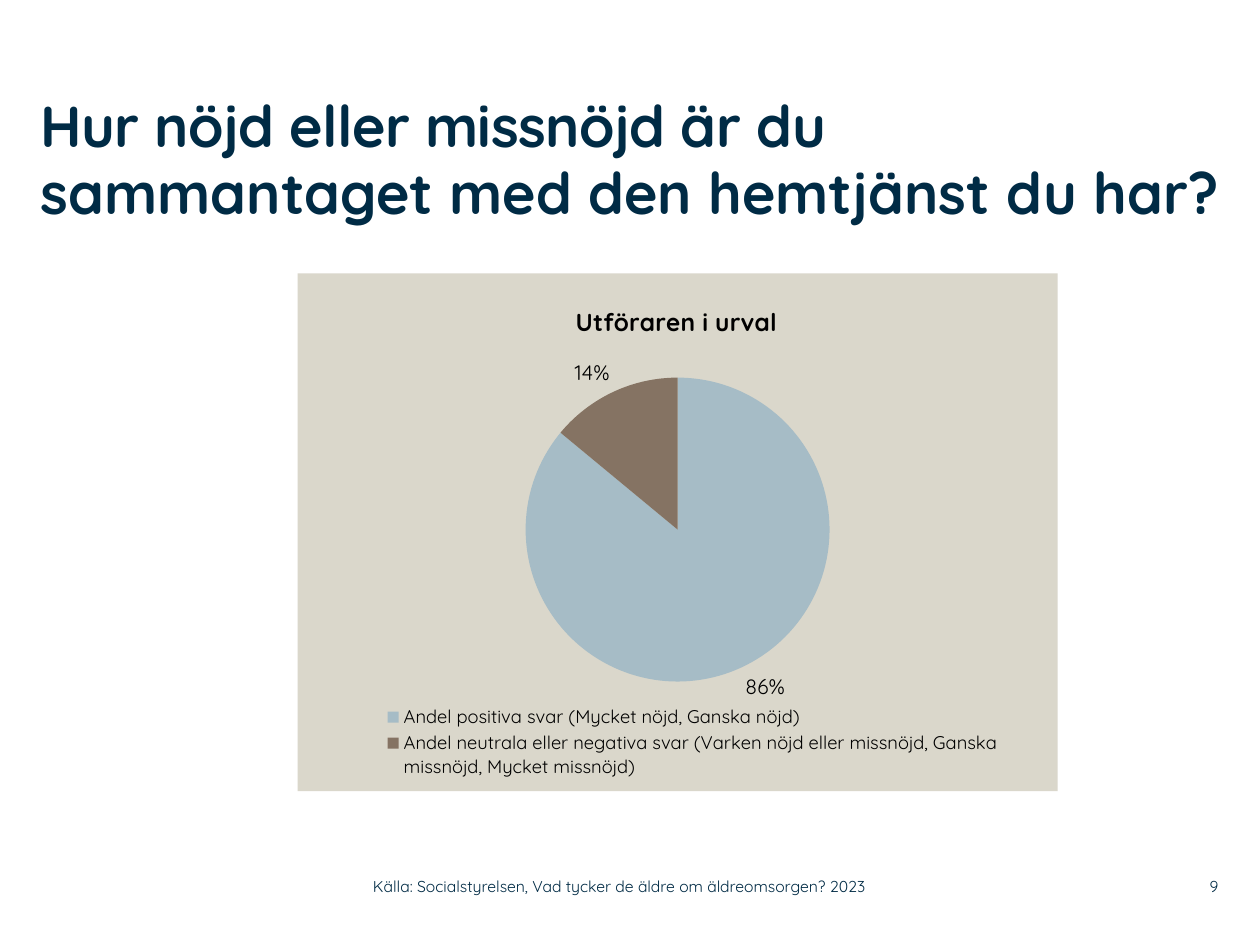
"""Build a slide with a pie chart of how satisfied clients are with their home care."""
import lxml.etree
import pptx
import pptx.chart.data
import pptx.dml.color
import pptx.enum.chart
import pptx.enum.text
import pptx.oxml.ns
import pptx.util

Cm = pptx.util.Cm
Pt = pptx.util.Pt
RGBColor = pptx.dml.color.RGBColor
ALIGN = pptx.enum.text.PP_ALIGN
ANCHOR = pptx.enum.text.MSO_ANCHOR

FONT = "Quicksand"
NAVY = RGBColor(0x00, 0x2B, 0x45)
BLACK = RGBColor(0x00, 0x00, 0x00)
SAND = RGBColor(0xDA, 0xD7, 0xCB)
BLUE = RGBColor(0xA6, 0xBC, 0xC6)
BROWN = RGBColor(0x85, 0x73, 0x63)

TITLE = "Hur nöjd eller missnöjd är du\vsammantaget med den hemtjänst du har?"
PROVIDER = "Utföraren i urval"
ANSWERS = [
    ("Andel positiva svar (Mycket nöjd, Ganska nöjd)", 86, BLUE),
    ("Andel neutrala eller negativa svar (Varken nöjd eller missnöjd, "
     "Ganska missnöjd, Mycket missnöjd)", 14, BROWN),
]
FOOTER = [
    ("Källa: Socialstyrelsen, Vad tycker de äldre om äldreomsorgen? 2023",
     7.52, 11.25, ALIGN.LEFT),
    ("9", 23.37, 1.19, ALIGN.RIGHT),
]


def set_font(font, size, color, bold=False):
    font.name = FONT
    font.size = Pt(size)
    font.bold = bold
    font.color.rgb = color


def fill_frame(shape, text, size, anchor, align, bold=False):
    frame = shape.text_frame
    frame.text = text
    frame.word_wrap = True
    frame.auto_size = pptx.enum.text.MSO_AUTO_SIZE.NONE
    frame.vertical_anchor = anchor
    frame.margin_left = frame.margin_right = frame.margin_top = frame.margin_bottom = 0
    paragraph = frame.paragraphs[0]
    paragraph.alignment = align
    for run in paragraph.runs:
        set_font(run.font, size, NAVY, bold)
    return paragraph


def place(parent, after, inner=False, **fractions):
    qn = pptx.oxml.ns.qn
    for old in parent.findall(qn("c:layout")):
        parent.remove(old)
    layout = lxml.etree.Element(qn("c:layout"))
    manual = lxml.etree.SubElement(layout, qn("c:manualLayout"))
    settings = {"layoutTarget": "inner"} if inner else {}
    settings.update(xMode="edge", yMode="edge", **fractions)
    for name, value in settings.items():
        lxml.etree.SubElement(manual, qn(f"c:{name}")).set("val", str(value))
    position = parent.index(parent.find(qn(after))) + 1 if after else 0
    parent.insert(position, layout)


def add_title(slide):
    title = slide.shapes.title
    title.left, title.top, title.width, title.height = Cm(0.81), Cm(1.9), Cm(24.16), Cm(3.61)
    paragraph = fill_frame(title, TITLE, 33, ANCHOR.TOP, ALIGN.LEFT, bold=True)
    paragraph.line_spacing = 0.96
    paragraph.runs[0].font._element.set("spc", "-30")


def add_pie(slide):
    data = pptx.chart.data.ChartData()
    data.categories = [label for label, value, color in ANSWERS]
    data.add_series(PROVIDER, [value for label, value, color in ANSWERS])
    frame = slide.shapes.add_chart(
        pptx.enum.chart.XL_CHART_TYPE.PIE, Cm(6), Cm(5.51), Cm(15.32), Cm(10.44), data)
    chart = frame.chart
    set_font(chart.font, 18, BLACK)

    chart.has_title = True
    chart.chart_title.include_in_layout = False
    chart.chart_title.text_frame.text = PROVIDER
    set_font(chart.chart_title.text_frame.paragraphs[0].runs[0].font, 14, BLACK, bold=True)
    place(chart.chart_title._element, "c:tx", x=0.36, y=0.05)

    chart.has_legend = True
    chart.legend.position = pptx.enum.chart.XL_LEGEND_POSITION.BOTTOM
    chart.legend.include_in_layout = False
    set_font(chart.legend.font, 10.5, BLACK)
    place(chart.legend._element, "c:legendPos", x=0.11, y=0.83, w=0.82, h=0.15)

    plot = chart.plots[0]
    plot.vary_by_categories = True
    for index, (label, value, color) in enumerate(ANSWERS):
        point = plot.series[0].points[index]
        point.format.fill.solid()
        point.format.fill.fore_color.rgb = color
        point.format.line.fill.background()
    plot.has_data_labels = True
    labels = plot.data_labels
    labels.show_percentage = True
    labels.show_value = False
    labels.number_format = "0%"
    labels.number_format_is_linked = False
    labels.position = pptx.enum.chart.XL_LABEL_POSITION.OUTSIDE_END
    set_font(labels.font, 12, BLACK)

    chart_space = chart._chartSpace
    plot_area = chart_space.chart.plotArea
    place(plot_area, None, inner=True, x=0.3, y=0.2, w=0.4, h=0.59)
    background = lxml.etree.Element(pptx.oxml.ns.qn("c:spPr"))
    fill = lxml.etree.SubElement(background, pptx.oxml.ns.qn("a:solidFill"))
    lxml.etree.SubElement(fill, pptx.oxml.ns.qn("a:srgbClr")).set("val", str(SAND))
    line = lxml.etree.SubElement(background, pptx.oxml.ns.qn("a:ln"))
    lxml.etree.SubElement(line, pptx.oxml.ns.qn("a:noFill"))
    chart_space.chart.addnext(background)


def add_footer(slide):
    for text, left, width, align in FOOTER:
        box = slide.shapes.add_textbox(Cm(left), Cm(17.5), Cm(width), Cm(0.74))
        fill_frame(box, text, 9, ANCHOR.MIDDLE, align)


def main():
    presentation = pptx.Presentation()
    presentation.slide_width, presentation.slide_height = Cm(25.4), Cm(19.05)
    slide = presentation.slides.add_slide(presentation.slide_layouts[5])
    add_title(slide)
    add_pie(slide)
    add_footer(slide)
    presentation.save("out.pptx")


if __name__ == "__main__":
    main()
